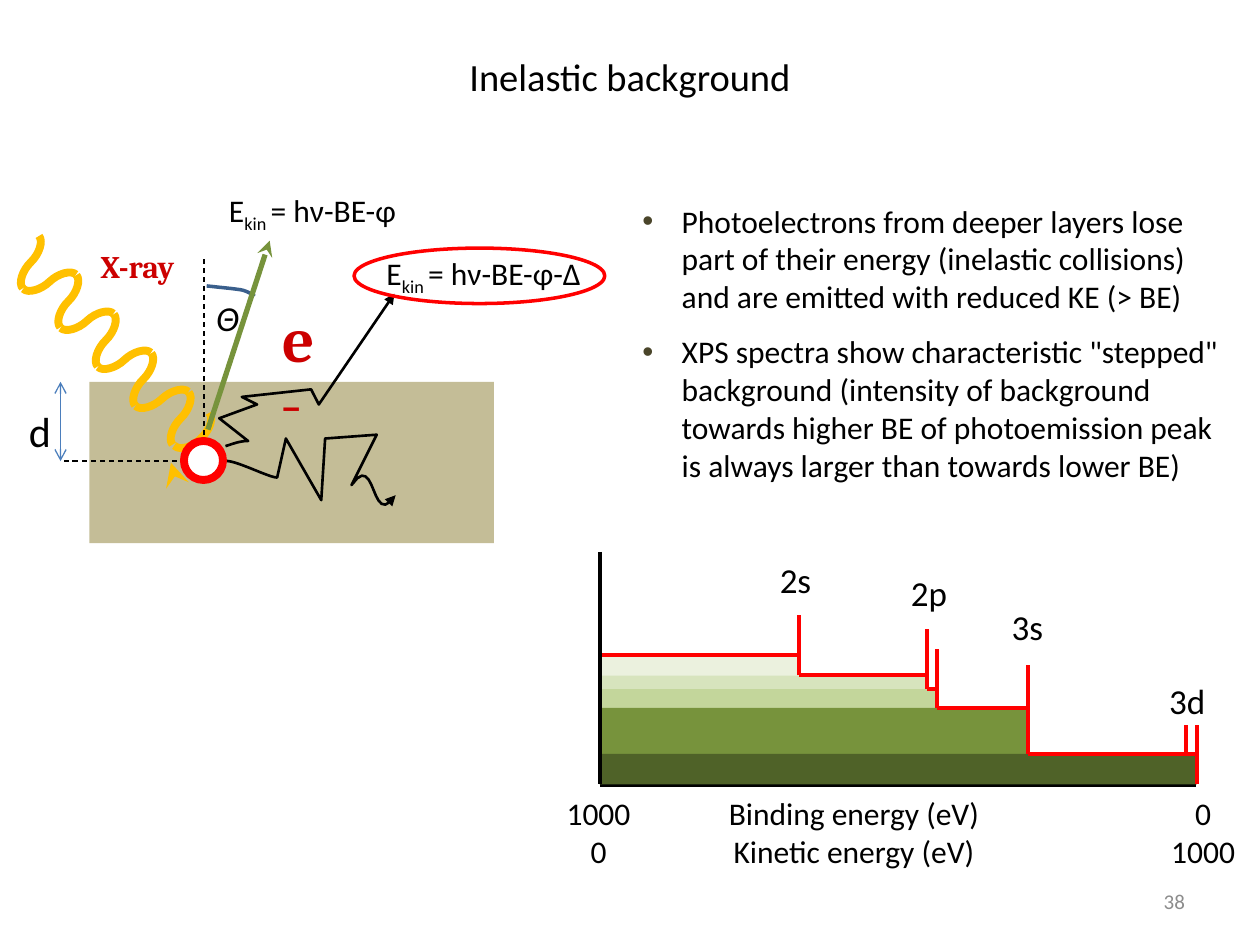
from itertools import pairwise

from lxml import etree
from pptx import Presentation
from pptx.dml.color import RGBColor
from pptx.enum import dml, shapes, text
from pptx.oxml import ns
from pptx.util import Pt

BLACK = RGBColor(0x00, 0x00, 0x00)
WHITE = RGBColor(0xFF, 0xFF, 0xFF)
GREY = RGBColor(0x8C, 0x8C, 0x8C)
RED = RGBColor(0xFF, 0x00, 0x00)
DARK_RED = RGBColor(0xCC, 0x00, 0x00)
SAND = RGBColor(0xC4, 0xBD, 0x97)
YELLOW = RGBColor(0xFF, 0xC0, 0x00)
GREEN = RGBColor(0x77, 0x93, 0x3C)
BLUE = RGBColor(0x4B, 0x7E, 0xBC)
DARK_BLUE = RGBColor(0x3A, 0x5F, 0x8C)
STEP_GREENS = [RGBColor(0xEB, 0xF1, 0xDE), RGBColor(0xD7, 0xE4, 0xBD), RGBColor(0xC3, 0xD6, 0x9B),
               GREEN, RGBColor(0x4F, 0x62, 0x28)]
LEFT, CENTER, RIGHT = text.PP_ALIGN.LEFT, text.PP_ALIGN.CENTER, text.PP_ALIGN.RIGHT
TOP, MIDDLE = text.MSO_ANCHOR.TOP, text.MSO_ANCHOR.MIDDLE
SHAPE = shapes.MSO_SHAPE
STRAIGHT, CURVE = shapes.MSO_CONNECTOR.STRAIGHT, shapes.MSO_CONNECTOR.CURVE

presentation = Presentation()
presentation.slide_width, presentation.slide_height = Pt(720), Pt(540)
slide = presentation.slides.add_slide(presentation.slide_layouts[6])


def add_text(box, paragraphs, size, align=LEFT, anchor=TOP, **font_format):
    """Each paragraph is a list of (words, baseline in percent) runs."""
    frame = slide.shapes.add_textbox(*map(Pt, box)).text_frame
    frame.word_wrap, frame.vertical_anchor = True, anchor
    font_values = {"name": "Calibri", "size": Pt(size)} | font_format
    color = font_values.pop("color", BLACK)
    for index, runs in enumerate(paragraphs):
        paragraph = frame.add_paragraph() if index else frame.paragraphs[0]
        paragraph.alignment = align
        for words, baseline in runs:
            run = paragraph.add_run()
            run.text = words
            run.font.color.rgb = color
            for name, value in font_values.items():
                setattr(run.font, name, value)
            if baseline:
                run.font._element.set("baseline", str(baseline * 1000))
    return frame


def style_line(shape, color, width, head=None, tail=None, dashed=False):
    """Outline a shape or connector, without shadow, with optional arrowheads."""
    shape.line.color.rgb = color
    shape.line.width = Pt(width)
    if dashed:
        shape.line.dash_style = dml.MSO_LINE.DASH
    for tag, kind in (("a:headEnd", head), ("a:tailEnd", tail)):
        if kind:
            etree.SubElement(shape.line._get_or_add_ln(), ns.qn(tag)).set("type", kind)
    etree.SubElement(shape._element.spPr, ns.qn("a:effectLst"))


add_text((36, 21.6, 648, 44), [[("Inelastic background", 0)]], 22, CENTER, MIDDLE)

# Sample block
block = slide.shapes.add_shape(SHAPE.RECTANGLE, Pt(51.1), Pt(218.2), Pt(231.1), Pt(92.2))
block.shadow.inherit = False
block.fill.solid()
block.fill.fore_color.rgb = SAND
block.line.fill.background()

# Electron paths and angle mark: pairs are corners, sixes are Bezier curves
paths = [
    ([(128.9, 254.9), (133.9, 253.4, 136.8, 252, 141.8, 252), (125.3, 239), (146.9, 231.1),
      (138.2, 226.8), (177.8, 222.5), (182.2, 231.1), (225.4, 167.8)], BLACK, 1.5, "triangle"),
    ([(128.2, 263.5), (133.2, 262.1, 153.4, 272.9, 158.4, 272.9), (163.4, 250.6), (183.6, 285.8),
      (185.8, 250.6), (215.3, 248.4), (200.9, 277.2), (215.3, 256.3, 211.7, 303.8, 226.1, 283)],
     BLACK, 1.5, "triangle"),
    ([(118.1, 163.4), (125.3, 164.2, 133.2, 164.9, 137.5, 165.6),
      (141.8, 166.3, 145.4, 169.2, 145.4, 169.2)], DARK_BLUE, 2, None),
]
for segments, color, width, tail in paths:
    points = [segments[0]]
    for segment in segments[1:]:
        if len(segment) == 2:
            points.append(segment)
            continue
        controls = [points[-1], segment[:2], segment[2:4], segment[4:]]
        for t in (step / 12 for step in range(1, 13)):
            weights = ((1 - t) ** 3, 3 * t * (1 - t) ** 2, 3 * t * t * (1 - t), t ** 3)
            points.append(tuple(sum(w * c[axis] for w, c in zip(weights, controls))
                                for axis in (0, 1)))
    vertices = [(Pt(x), Pt(y)) for x, y in points]
    builder = slide.shapes.build_freeform(*vertices[0])
    builder.add_line_segments(vertices[1:], close=False)
    path = builder.convert_to_shape()
    path.fill.background()
    style_line(path, color, width, tail=tail)

# X-ray wave
for index in range(9):
    left, right = 10.1 + 10.7 * index, 25.2 + 10.7 * index
    top = 136.1 + 11.16 * index
    start, end = (right, left) if index % 2 else (left, right)
    wave = slide.shapes.add_connector(CURVE, Pt(start), Pt(top), Pt(end), Pt(top + 27.4))
    wave._element.spPr.find(ns.qn("a:xfrm")).set("rot", str(46 * 60000))
    style_line(wave, YELLOW, 4.5)
for top, rotation, angles, tail in ((237.6, 136.3, (181.2, 0), None),
                                    (257, 337.4, (162, 203.26), "stealth")):
    arc = slide.shapes.add_shape(SHAPE.ARC, Pt(95.8), Pt(top), Pt(27.4), Pt(15.1))
    arc.rotation = rotation
    for index, angle in enumerate(angles):
        arc.adjustments[index] = angle * 0.6
    arc.fill.background()
    style_line(arc, YELLOW, 4.5, tail=tail)

# Emission arrow, depth arrow and dashed guides
for ends, color, width, options in (
    ((118.8, 245.5, 154.1, 137.5), GREEN, 3, {"tail": "stealth"}),
    ((34.6, 218.2, 34.6, 263.5), BLUE, 0.75, {"head": "arrow", "tail": "arrow"}),
    ((116.6, 263.5, 36.7, 263.5), BLACK, 0.75, {"dashed": True}),
    ((116.6, 264.2, 116.6, 146.2), BLACK, 0.75, {"dashed": True}),
):
    style_line(slide.shapes.add_connector(STRAIGHT, *map(Pt, ends)), color, width, **options)

# Emitting atom and the marked energy
for box, fill, width in (((105.1, 252, 22.3, 22.3), WHITE, 4.5),
                         ((202.3, 141.8, 143.3, 31.7), None, 2)):
    ellipse = slide.shapes.add_shape(SHAPE.OVAL, *map(Pt, box))
    if fill is None:
        ellipse.fill.background()
    else:
        ellipse.fill.solid()
        ellipse.fill.fore_color.rgb = fill
    style_line(ellipse, RED, width)

cambria = {"name": "Cambria", "bold": True, "color": DARK_RED}
add_text((50.4, 137.5, 66, 29), [[("X-ray", 0)]], 18, **cambria)
add_text((154.1, 167.8, 42.5, 50), [[("e", 0), ("–", 30)]], 36, **cambria)
for left, top, energy in ((123.8, 105.8, "= hν-BE-φ"), (213.8, 141.8, "= hν-BE-φ-Δ")):
    add_text((left, top, 136, 29), [[("E", 0), ("kin ", -25), (energy, 0)]], 18)
add_text((9.4, 228.2, 30, 36), [[("d", 0)]], 24)
add_text((116.6, 165.6, 32, 32), [[("Θ", 0)]], 20, italic=True)

bullets = add_text((360, 111.6, 352.8, 170), [
    [("Photoelectrons from deeper layers lose part of their energy (inelastic collisions) "
      "and are emitted with reduced KE (> BE)", 0)],
    [('XPS spectra show characteristic "stepped" background (intensity of background towards '
      "higher BE of photoemission peak is always larger than towards lower BE)", 0)],
], 18)
for paragraph in bullets.paragraphs:
    paragraph.space_after = Pt(10)
    properties = paragraph._p.get_or_add_pPr()
    properties.set("marL", str(Pt(22.5)))
    properties.set("indent", str(-Pt(22.5)))
    bullet_color = etree.SubElement(properties, ns.qn("a:buClr"))
    etree.SubElement(bullet_color, ns.qn("a:srgbClr")).set("val", "4A452A")
    etree.SubElement(properties, ns.qn("a:buFont")).set("typeface", "Arial")
    etree.SubElement(properties, ns.qn("a:buChar")).set("char", "•")

# Stepped spectrum: each step ends in a peak that drops to the next level
edges = [342.7, 456.5, 529.9, 535.3, 587.5, 684]
levels = [374.4, 385.9, 393.8, 404.6, 430.8, 448.2]
peak_tops = [351.4, 359.3, 370.8, 380.2, 414]
axis_left, axis_bottom = edges[0], 448.2

style_line(slide.shapes.add_connector(
    STRAIGHT, Pt(axis_left), Pt(axis_bottom), Pt(683.3), Pt(axis_bottom)), BLACK, 3)
for right, (top, bottom), color in zip(edges[1:], pairwise(levels), STEP_GREENS):
    band = slide.shapes.add_shape(SHAPE.RECTANGLE, Pt(axis_left), Pt(top),
                                  Pt(right - axis_left), Pt(bottom - top))
    band.shadow.inherit = False
    band.fill.solid()
    band.fill.fore_color.rgb = color
    band.line.fill.background()

spectrum = [(677.5, 430.8, 677.5, 414)]
for (left, right), (level, next_level), peak in zip(pairwise(edges), pairwise(levels), peak_tops):
    spectrum += [(left, level, right, level), (right, next_level, right, peak)]
for ends in spectrum:
    style_line(slide.shapes.add_connector(STRAIGHT, *map(Pt, ends)), RED, 2.25)
style_line(slide.shapes.add_connector(
    STRAIGHT, Pt(axis_left), Pt(315.4), Pt(axis_left), Pt(axis_bottom)), BLACK, 2.25)

for left, top, orbital in ((438.5, 315.4, "2s"), (513.4, 323.3, "2p"),
                           (571, 342.7, "3s"), (661, 384.5, "3d")):
    add_text((left, top, 40, 32), [[(orbital, 0)]], 20)

for middle, width, binding, kinetic in ((342, 60, "1000", "0"),
                                        (488, 190, "Binding energy (eV)", "Kinetic energy (eV)"),
                                        (687.5, 60, "0", "1000")):
    add_text((middle - width / 2, 450, width, 51), [[(binding, 0)], [(kinetic, 0)]], 18, CENTER)

add_text((516.2, 500.4, 168, 28.8), [[("38", 0)]], 12, RIGHT, MIDDLE, color=GREY)

presentation.save("out.pptx")
